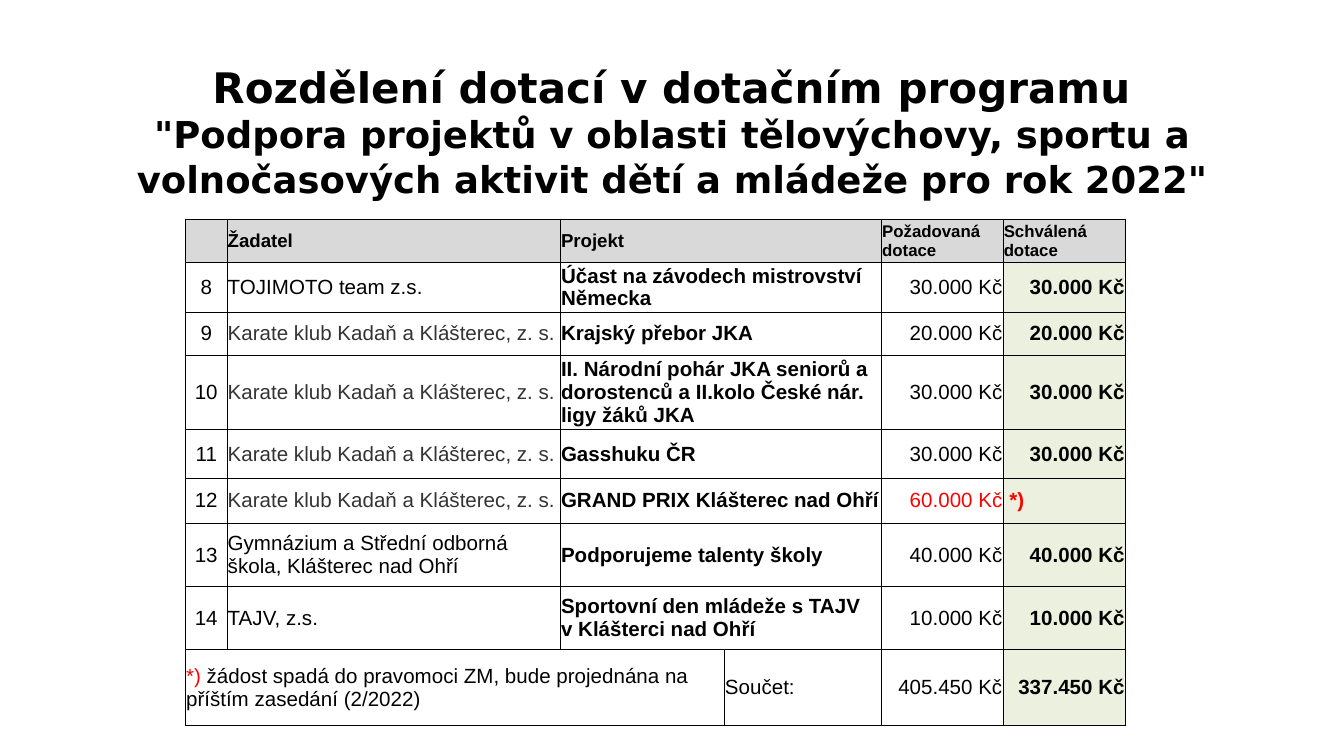
from dataclasses import dataclass

import pptx
import pptx.dml.color
import pptx.enum.text
import pptx.oxml
import pptx.oxml.ns
import pptx.table
import pptx.util

RGBColor = pptx.dml.color.RGBColor
ALIGN = pptx.enum.text.PP_ALIGN
MIDDLE = pptx.enum.text.MSO_ANCHOR.MIDDLE

PX = 4572  # 200 px to the inch
BLACK = RGBColor(0x00, 0x00, 0x00)
GRAY_TEXT = RGBColor(0x33, 0x33, 0x33)
RED = RGBColor(0xFF, 0x00, 0x00)
WHITE = RGBColor(0xFF, 0xFF, 0xFF)
HEADER_FILL = RGBColor(0xD9, 0xD9, 0xD9)
APPROVED_FILL = RGBColor(0xEB, 0xF1, 0xDE)

COLUMN_WIDTHS = [62, 496, 244, 234, 181, 182]
ROW_HEIGHTS = [64, 72, 64, 72, 72, 67, 94, 94, 114]
NUMBER, APPLICANT, PROJECT, TOTAL_LABEL, REQUESTED, APPROVED = range(6)
KARATE_CLUB = "Karate klub Kadaň a Klášterec, z. s."


@dataclass
class Grant:
    number: int
    applicant: str
    project: str
    amount: str
    deferred: bool = False


GRANTS = [
    Grant(8, "TOJIMOTO team z.s.", "Účast na závodech mistrovství Německa", "30.000 Kč"),
    Grant(9, KARATE_CLUB, "Krajský přebor JKA", "20.000 Kč"),
    Grant(10, KARATE_CLUB,
          "II. Národní pohár JKA seniorů a dorostenců a II.kolo České nár. ligy žáků JKA",
          "30.000 Kč"),
    Grant(11, KARATE_CLUB, "Gasshuku ČR", "30.000 Kč"),
    Grant(12, KARATE_CLUB, "GRAND PRIX Klášterec nad Ohří", "60.000 Kč", deferred=True),
    Grant(13, "Gymnázium a Střední odborná škola, Klášterec nad Ohří",
          "Podporujeme talenty školy", "40.000 Kč"),
    Grant(14, "TAJV, z.s.", "Sportovní den mládeže s TAJV\nv Klášterci nad Ohří", "10.000 Kč"),
]


def px(length: int) -> int:
    return pptx.util.Emu(length * PX)


def add_borders(cell: pptx.table._Cell) -> None:
    properties = cell._tc.get_or_add_tcPr()
    for side in ("lnL", "lnR", "lnT", "lnB"):
        properties.append(pptx.oxml.parse_xml(
            f'<a:{side} {pptx.oxml.ns.nsdecls("a")} w="6350"><a:solidFill>'
            f'<a:srgbClr val="{BLACK}"/></a:solidFill></a:{side}>'))


def prepare_cell(cell: pptx.table._Cell, fill: RGBColor | None) -> None:
    cell.margin_left = cell.margin_top = cell.margin_right = px(1)
    cell.margin_bottom = 0
    cell.vertical_anchor = MIDDLE
    add_borders(cell)
    if fill is None:
        cell.fill.background()
    else:
        cell.fill.solid()
        cell.fill.fore_color.rgb = fill
    cell.text_frame.paragraphs[0].font.size = pptx.util.Pt(10)


def write_cell(cell: pptx.table._Cell, text: str, size: int = 11, bold: bool = False,
               color: RGBColor = BLACK, alignment: ALIGN = ALIGN.LEFT) -> None:
    cell.text = text
    for paragraph in cell.text_frame.paragraphs:
        paragraph.alignment = alignment
        paragraph.font.name = "Arial"
        paragraph.font.size = pptx.util.Pt(size)
        paragraph.font.bold = bold
        paragraph.font.color.rgb = color


def write_grant(table: pptx.table.Table, row: int, grant: Grant) -> None:
    write_cell(table.cell(row, NUMBER), str(grant.number), alignment=ALIGN.CENTER)
    write_cell(table.cell(row, APPLICANT), grant.applicant,
               color=GRAY_TEXT if grant.applicant == KARATE_CLUB else BLACK)
    write_cell(table.cell(row, PROJECT), grant.project, bold=True)
    amount_color = RED if grant.deferred else BLACK
    write_cell(table.cell(row, REQUESTED), grant.amount,
               color=amount_color, alignment=ALIGN.RIGHT)
    write_cell(table.cell(row, APPROVED), " *)" if grant.deferred else grant.amount,
               bold=True, color=amount_color,
               alignment=ALIGN.LEFT if grant.deferred else ALIGN.RIGHT)


presentation = pptx.Presentation()
presentation.slide_width, presentation.slide_height = px(2000), px(1125)
slide = presentation.slides.add_slide(presentation.slide_layouts[6])

# Title
title_frame = slide.shapes.add_textbox(px(100), px(101), px(1800), px(188)).text_frame
title_frame.word_wrap = True
title_frame.vertical_anchor = MIDDLE
title = title_frame.paragraphs[0]
title.alignment = ALIGN.CENTER
title.font.name = "DejaVu Sans"
title.font.bold = True
title.font.color.rgb = BLACK
heading = title.add_run()
heading.text = "Rozdělení dotací v dotačním programu"
heading.font.size = pptx.util.Pt(22.5)
title.add_line_break()
program = title.add_run()
program.text = ('"Podpora projektů v oblasti tělovýchovy, sportu a '
                'volnočasových aktivit dětí a mládeže pro rok 2022"')
program.font.size = pptx.util.Pt(19.8)

# Table grid
last_row = len(ROW_HEIGHTS) - 1
table = slide.shapes.add_table(
    len(ROW_HEIGHTS), len(COLUMN_WIDTHS), px(276), px(326),
    px(sum(COLUMN_WIDTHS)), px(sum(ROW_HEIGHTS))).table
table.first_row = table.horz_banding = False
for column, width in zip(table.columns, COLUMN_WIDTHS):
    column.width = px(width)
for row_index, height in enumerate(ROW_HEIGHTS):
    table.rows[row_index].height = px(height)
    for column_index in range(len(COLUMN_WIDTHS)):
        fill = {REQUESTED: WHITE, APPROVED: APPROVED_FILL}.get(column_index)
        prepare_cell(table.cell(row_index, column_index),
                     HEADER_FILL if row_index == 0 else fill)
    if row_index < last_row:
        table.cell(row_index, PROJECT).merge(table.cell(row_index, TOTAL_LABEL))
table.cell(last_row, NUMBER).merge(table.cell(last_row, PROJECT))

# Header row
for column_index, label, size in [
    (APPLICANT, "Žadatel", 10), (PROJECT, "Projekt", 10),
    (REQUESTED, "Požadovaná dotace", 9), (APPROVED, "Schválená dotace", 9),
]:
    write_cell(table.cell(0, column_index), label, size, bold=True)

# Grant rows
for row_index, grant in enumerate(GRANTS, start=1):
    write_grant(table, row_index, grant)

# Footnote and totals
footnote = table.cell(last_row, NUMBER)
write_cell(footnote, "*)")
footnote_paragraph = footnote.text_frame.paragraphs[0]
footnote_paragraph.runs[0].font.color.rgb = RED
footnote_paragraph.add_run().text = (
    " žádost spadá do pravomoci ZM, bude projednána na příštím zasedání (2/2022)")
write_cell(table.cell(last_row, TOTAL_LABEL), "Součet:")
write_cell(table.cell(last_row, REQUESTED), "405.450 Kč", alignment=ALIGN.RIGHT)
write_cell(table.cell(last_row, APPROVED), "337.450 Kč", bold=True, alignment=ALIGN.RIGHT)

presentation.save("out.pptx")
